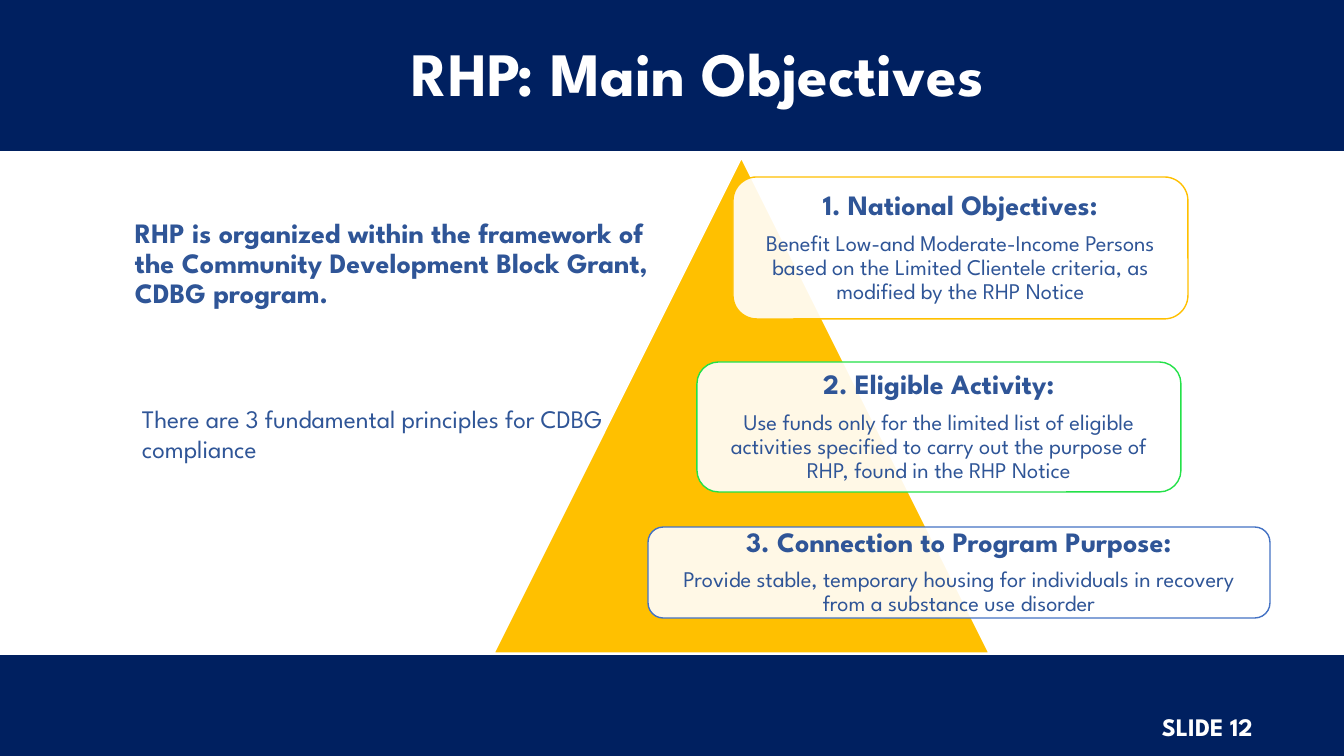
import dataclasses

import pptx
import pptx.dml.color
import pptx.enum.shapes
import pptx.enum.text
import pptx.oxml.ns
import pptx.util
from lxml import etree

ALIGN = pptx.enum.text.PP_ALIGN
ANCHOR = pptx.enum.text.MSO_ANCHOR
SHAPE = pptx.enum.shapes.MSO_SHAPE


@dataclasses.dataclass(frozen=True)
class Theme:
    font: str = "League Spartan"
    navy: str = "002060"
    blue: str = "2F5597"
    white: str = "FFFFFF"
    gold: str = "FFC000"
    green: str = "23E148"
    azure: str = "4472C4"
    title: int = 44
    lead: int = 20
    note: int = 18
    detail: int = 16


def px(length):
    return pptx.util.Emu(round(length * 914400 / 100.8))


def rgb(color):
    return pptx.dml.color.RGBColor.from_string(color)


class SlideBuilder:
    """Draws themed elements on the current slide, with lengths in px."""

    def __init__(self, slide, theme):
        self.slide = slide
        self.theme = theme

    def shape(self, kind, box, fill, line=None, opacity=100):
        shape = self.slide.shapes.add_shape(kind, *map(px, box))
        shape.shadow.inherit = False
        shape.fill.solid()
        shape.fill.fore_color.rgb = rgb(fill)
        if opacity < 100:
            color = shape.element.spPr.find(".//" + pptx.oxml.ns.qn("a:srgbClr"))
            alpha = etree.SubElement(color, pptx.oxml.ns.qn("a:alpha"))
            alpha.set("val", str(opacity * 1000))
        if line:
            shape.line.color.rgb = rgb(line)
            shape.line.width = pptx.util.Pt(1)
        else:
            shape.line.fill.background()
        return shape

    def style_text(self, paragraph, text, size, color, bold, align, spacing):
        paragraph.text = text
        paragraph.alignment = align
        paragraph.line_spacing = spacing
        paragraph.font.name = self.theme.font
        paragraph.font.size = pptx.util.Pt(size)
        paragraph.font.bold = bold
        paragraph.font.color.rgb = rgb(color)

    def text(self, box, text, size, color, bold=True, align=ALIGN.LEFT,
             spacing=1.0, anchor=ANCHOR.TOP):
        frame = self.slide.shapes.add_textbox(*map(px, box)).text_frame
        frame.word_wrap = True
        frame.vertical_anchor = anchor
        self.style_text(frame.paragraphs[0], text, size, color, bold, align, spacing)

    def card(self, box, line, heading, detail):
        theme = self.theme
        card = self.shape(SHAPE.ROUNDED_RECTANGLE, box, theme.white, line, opacity=90)
        frame = card.text_frame
        frame.word_wrap = True
        frame.vertical_anchor = ANCHOR.MIDDLE
        frame.margin_left = frame.margin_right = px(8)
        frame.margin_top = frame.margin_bottom = px(8)
        self.style_text(frame.paragraphs[0], heading, theme.lead, theme.blue, True,
                        ALIGN.CENTER, 0.9)
        frame.paragraphs[0].space_after = pptx.util.Pt(7)
        self.style_text(frame.add_paragraph(), detail, theme.detail, theme.blue, False,
                        ALIGN.CENTER, 0.9)


def main():
    theme = Theme()
    deck = pptx.Presentation()
    deck.slide_width, deck.slide_height = px(1344), px(756)
    builder = SlideBuilder(deck.slides.add_slide(deck.slide_layouts[6]), theme)

    for top, height in ((0, 151), (655, 101)):
        builder.shape(SHAPE.RECTANGLE, (0, top, 1344, height), theme.navy)
    builder.text((1152, 706, 135, 40), "SLIDE 12", theme.note, theme.white,
                 anchor=ANCHOR.MIDDLE)
    builder.text((238, 41, 920, 71), "RHP: Main Objectives", theme.title, theme.white,
                 align=ALIGN.CENTER, spacing=0.9, anchor=ANCHOR.MIDDLE)
    builder.text((125, 214, 562, 116),
                 "RHP is organized within the framework of the Community Development "
                 "Block Grant, CDBG program.",
                 theme.lead, theme.blue, spacing=0.9)

    builder.shape(SHAPE.ISOSCELES_TRIANGLE, (494, 158, 495, 495), theme.gold, theme.white)
    objectives = (
        ((733, 177, 455, 142), theme.gold, "1. National Objectives:",
         "Benefit Low-and Moderate-Income Persons based on the Limited Clientele "
         "criteria, as modified by the RHP Notice"),
        ((697, 362, 484, 130), theme.green, "2. Eligible Activity:",
         "Use funds only for the limited list of eligible activities specified to "
         "carry out the purpose of RHP, found in the RHP Notice"),
        ((648, 527, 622, 91), theme.azure, "3. Connection to Program Purpose:",
         "Provide stable, temporary housing for individuals in recovery from a "
         "substance use disorder"),
    )
    for objective in objectives:
        builder.card(*objective)

    builder.text((132, 398, 483, 72), "There are 3 fundamental principles for CDBG compliance",
                 theme.note, theme.blue, bold=False)
    deck.save("out.pptx")


if __name__ == "__main__":
    main()
